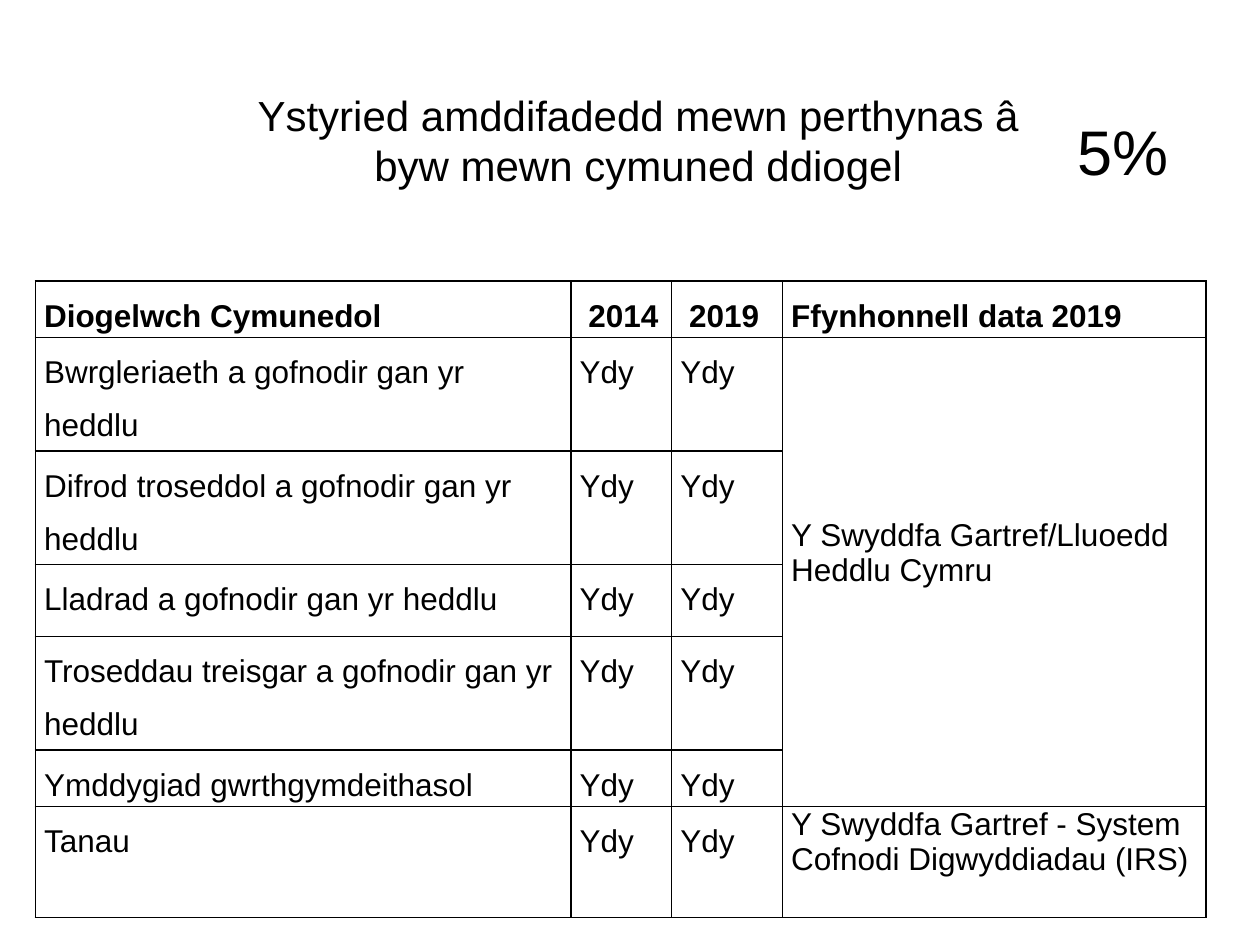
"""Build a slide with a table of community safety indicators."""
from itertools import product

from lxml import etree
from pptx import Presentation, util as u
from pptx.dml.color import RGBColor
from pptx.enum import text
from pptx.oxml.ns import qn

THEME = {"font": "Arial", "ink": RGBColor(0, 0, 0), "title": 24, "share": 36,
         "body": 18, "border": 1, "spacing": 1.5}

WIDTH, HEIGHT = 10, 7.5
TITLE = "Ystyried amddifadedd mewn perthynas â byw mewn cymuned ddiogel"
SHARE = "5%"
HEADER = ["Diogelwch Cymunedol", "2014", "2019", "Ffynhonnell data 2019"]
INDICATORS = [
    "Bwrgleriaeth a gofnodir gan yr heddlu",
    "Difrod troseddol a gofnodir gan yr heddlu",
    "Lladrad a gofnodir gan yr heddlu",
    "Troseddau treisgar a gofnodir gan yr heddlu",
    "Ymddygiad gwrthgymdeithasol",
    "Tanau",
]
INCLUDED = "Ydy"
SOURCES = {1: "Y Swyddfa Gartref/Lluoedd Heddlu Cymru",
           6: "Y Swyddfa Gartref - System Cofnodi Digwyddiadau (IRS)"}
ROWS = [HEADER] + [[name, INCLUDED, INCLUDED, SOURCES.get(i, "")]
                   for i, name in enumerate(INDICATORS, 1)]

TABLE_AT = (0.28, 2.23)
COLS = [4.25, 0.8, 0.88, 3.36]
HEIGHTS = [0.44, 0.88, 0.88, 0.57, 0.88, 0.45, 0.88]
INSET = 0.07


def write(tf, words, size, bold=False, align=None, spacing=None):
    tf.text = words
    p = tf.paragraphs[0]
    p.alignment, p.line_spacing = align, spacing
    for r in p.runs:
        r.font.name, r.font.size, r.font.bold = THEME["font"], u.Pt(size), bold
        r.font.color.rgb = THEME["ink"]


def add_text(s, box, words, size, align=None):
    tf = s.shapes.add_textbox(*map(u.Inches, box)).text_frame
    tf.word_wrap = True
    tf.auto_size = text.MSO_AUTO_SIZE.SHAPE_TO_FIT_TEXT
    write(tf, words, size, align=align)


def set_borders(cell):
    tc_pr = cell._tc.get_or_add_tcPr()
    for i, side in enumerate(("a:lnL", "a:lnR", "a:lnT", "a:lnB")):
        ln = etree.Element(qn(side), w=str(u.Pt(THEME["border"])))
        fill = etree.SubElement(ln, qn("a:solidFill"))
        etree.SubElement(fill, qn("a:srgbClr"), val=str(THEME["ink"]))
        tc_pr.insert(i, ln)


def add_indicators(s):
    size = (sum(COLS), sum(HEIGHTS))
    table = s.shapes.add_table(len(ROWS), len(COLS),
                               *map(u.Inches, TABLE_AT + size)).table
    table.first_row = table.horz_banding = False
    for col, width in zip(table.columns, COLS):
        col.width = u.Inches(width)
    for row, height in zip(table.rows, HEIGHTS):
        row.height = u.Inches(height)
    for i, j in product(range(len(ROWS)), range(len(COLS))):
        cell = table.cell(i, j)
        is_header, is_source = i == 0, i > 0 and j == 3
        cell.margin_left = u.Inches(INSET * (2 if is_header and j in (1, 2) else 1))
        cell.margin_right = u.Inches(INSET)
        cell.margin_top = cell.margin_bottom = 0
        cell.fill.background()
        set_borders(cell)
        write(cell.text_frame, ROWS[i][j], THEME["body"], is_header,
              spacing=None if is_source else THEME["spacing"])
    police = table.cell(1, 3)
    police.merge(table.cell(5, 3))
    police.vertical_anchor = text.MSO_ANCHOR.MIDDLE
    police.margin_bottom = u.Inches(0.3)


def main():
    prs = Presentation()
    prs.slide_width, prs.slide_height = u.Inches(WIDTH), u.Inches(HEIGHT)
    s = prs.slides.add_slide(prs.slide_layouts[6])
    add_text(s, (1.85, 0.66, 6.43, 0.91), TITLE, THEME["title"],
             text.PP_ALIGN.CENTER)
    add_indicators(s)
    add_text(s, (8.45, 0.84, 1.23, 0.71), SHARE, THEME["share"])
    prs.save("out.pptx")


if __name__ == "__main__":
    main()
